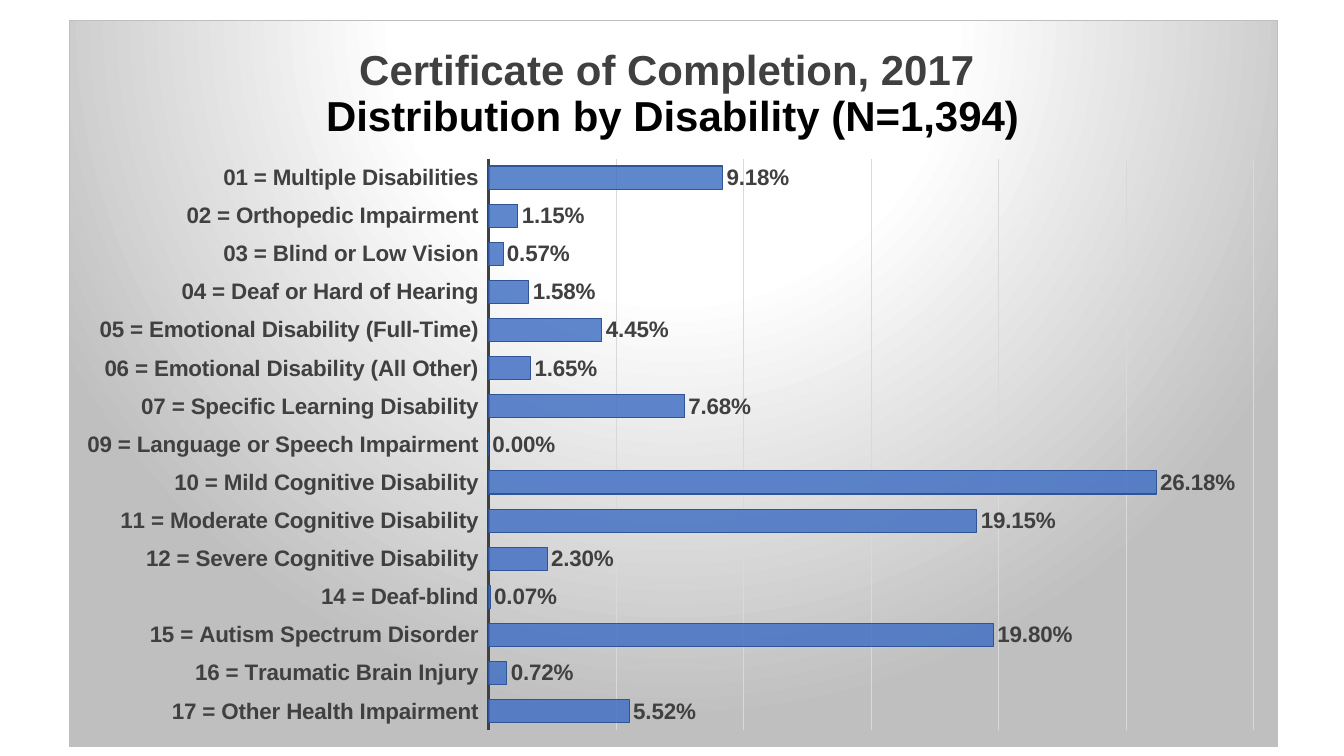
"""Build a slide with a bar chart of certificates by disability."""
from lxml import etree
from pptx import Presentation
from pptx.chart.data import CategoryChartData
from pptx.dml.color import RGBColor
from pptx.enum.chart import XL_CHART_TYPE, XL_LABEL_POSITION, XL_TICK_LABEL_POSITION, XL_TICK_MARK
from pptx.oxml import parse_xml
from pptx.util import Inches, Pt

BAR = XL_CHART_TYPE.BAR_CLUSTERED
OUT = XL_LABEL_POSITION.OUTSIDE_END
LOW = XL_TICK_LABEL_POSITION.LOW
NONE = XL_TICK_MARK.NONE
NS = {
    "c": "http://schemas.openxmlformats.org/drawingml/2006/chart",
    "a": "http://schemas.openxmlformats.org/drawingml/2006/main",
}
COLORS = {
    "black": "000000", "text": "404040", "bar": "4472C4", "edge": "2F5597",
    "grid": "D9D9D9", "white": "FFFFFF", "gray": "BFBFBF",
}
SHARES = [
    ("01 = Multiple Disabilities", 0.0918),
    ("02 = Orthopedic Impairment", 0.0115),
    ("03 = Blind or Low Vision", 0.0057),
    ("04 = Deaf or Hard of Hearing", 0.0158),
    ("05 = Emotional Disability (Full-Time)", 0.0445),
    ("06 = Emotional Disability (All Other)", 0.0165),
    ("07 = Specific Learning Disability", 0.0768),
    ("09 = Language or Speech Impairment", 0),
    ("10 = Mild Cognitive Disability", 0.2618),
    ("11 = Moderate Cognitive Disability", 0.1915),
    ("12 = Severe Cognitive Disability", 0.023),
    ("14 = Deaf-blind", 0.0007),
    ("15 = Autism Spectrum Disorder", 0.198),
    ("16 = Traumatic Brain Injury", 0.0072),
    ("17 = Other Health Impairment", 0.0552),
]


def style(font, size=16, color="text", bold=True):
    font.name, font.size, font.bold = "Arial", Pt(size), bold
    font.color.rgb = RGBColor.from_string(COLORS[color])


def write(par, text, **form):
    run = par.add_run()
    run.text = text
    style(run.font, **form)


class Deck:
    def __init__(self, show):
        self.slide = show.slides.add_slide(show.slide_layouts[6])

    def line(self, line, color, width):
        line.color.rgb = RGBColor.from_string(COLORS[color])
        line.width = Pt(width)

    def place(self, node, index, **spots):
        for old in node.findall("c:layout", NS):
            node.remove(old)
        layout = etree.fromstring(f'<c:layout xmlns:c="{NS["c"]}"><c:manualLayout/></c:layout>')
        for tag, value in spots.items():
            etree.SubElement(layout[0], f"{{{NS['c']}}}{tag}").set("val", str(value))
        node.insert(index, parse_xml(etree.tostring(layout)))

    def panel(self, chart):
        stops = "".join(
            f'<a:gs pos="{pos}"><a:srgbClr val="{COLORS[name]}"/></a:gs>'
            for pos, name in ((0, "white"), (39000, "white"), (100000, "gray"))
        )
        chart.element.find("c:chart", NS).addnext(parse_xml(
            f'<c:spPr xmlns:c="{NS["c"]}" xmlns:a="{NS["a"]}">'
            f'<a:gradFill><a:gsLst>{stops}</a:gsLst><a:path path="circle">'
            '<a:fillToRect l="50000" t="-80000" r="50000" b="180000"/></a:path></a:gradFill>'
            f'<a:ln w="9525"><a:solidFill><a:srgbClr val="{COLORS["gray"]}"/></a:solidFill></a:ln>'
            "</c:spPr>"
        ))

    def title(self, chart, lines):
        frame = chart.chart_title.text_frame
        for i, (text, color) in enumerate(lines):
            par = frame.add_paragraph() if i else frame.paragraphs[0]
            write(par, text, size=30, color=color)
        chart.chart_title.include_in_layout = False
        self.place(chart.chart_title.element, 1, xMode="edge", yMode="edge", x=0.21, y=0.03)

    def axes(self, chart):
        cat, val = chart.category_axis, chart.value_axis
        cat.reverse_order = True
        cat.major_tick_mark = cat.minor_tick_mark = NONE
        cat.tick_label_position = LOW
        style(cat.tick_labels.font)
        self.line(cat.format.line, "text", 1.5)
        val.minimum_scale, val.maximum_scale, val.major_unit = 0, 0.3, 0.05
        val.has_major_gridlines = True
        self.line(val.major_gridlines.format.line, "grid", 0.75)
        val.visible = False

    def bars(self, chart):
        plot = chart.plots[0]
        plot.gap_width, plot.vary_by_categories = 65, False
        series = plot.series[0]
        series.format.fill.solid()
        series.format.fill.fore_color.rgb = RGBColor.from_string(COLORS["bar"])
        self.line(series.format.line, "edge", 0.75)
        color = chart.element.find(".//c:ser/c:spPr/a:solidFill/a:srgbClr", NS)
        etree.SubElement(color, f"{{{NS['a']}}}alpha").set("val", "85000")
        labels = series.data_labels
        labels.show_value, labels.position = True, OUT
        labels.number_format, labels.number_format_is_linked = "0.00%", False
        style(labels.font)

    def chart(self, box, shares, lines):
        data = CategoryChartData(number_format="0.00%")
        data.categories = [name for name, _ in shares]
        data.add_series("Series 1", [share for _, share in shares])
        chart = self.slide.shapes.add_chart(BAR, *map(Inches, box), data).chart
        chart.has_legend = False
        style(chart.font, size=10, color="black", bold=False)
        self.panel(chart)
        self.title(chart, lines)
        self.axes(chart)
        self.bars(chart)
        self.place(chart.element.find(".//c:plotArea", NS), 0, layoutTarget="inner",
                   xMode="edge", yMode="edge", x=0.347, y=0.19, w=0.633, h=0.788)


def main():
    show = Presentation()
    show.slide_width, show.slide_height = Inches(13.33), Inches(7.5)
    Deck(show).chart((0.68, 0.2, 12, 7.21), SHARES, [
        ("Certificate of Completion, 2017 ", "text"),
        ("Distribution by Disability (N=1,394)", "black"),
    ])
    show.save("out.pptx")


if __name__ == "__main__":
    main()
